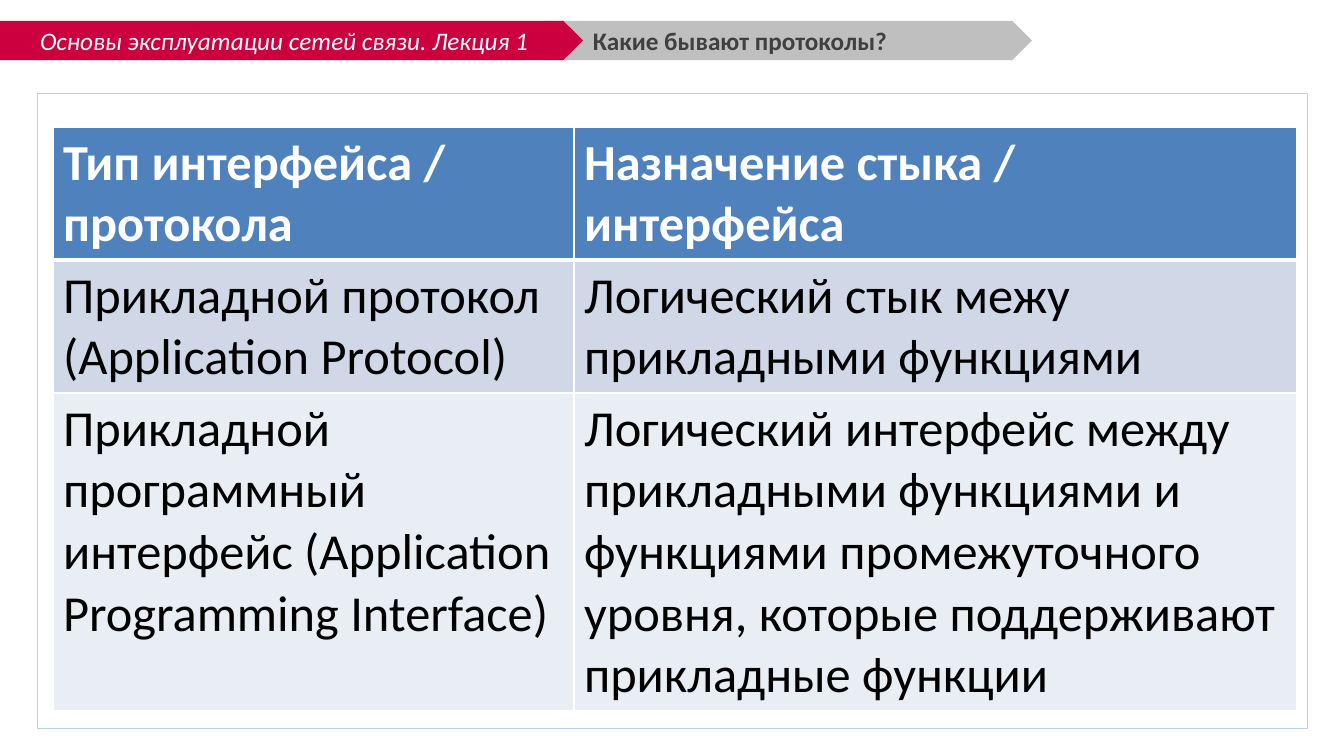
import pptx
import pptx.util
import pptx.dml.color
import pptx.enum.shapes
import pptx.enum.text
import pptx.oxml.ns
import lxml.etree

RGBColor = pptx.dml.color.RGBColor
WHITE = RGBColor(0xFF, 0xFF, 0xFF)
BLACK = RGBColor(0x00, 0x00, 0x00)
CRIMSON = RGBColor(0xCC, 0x00, 0x3F)
GREY = RGBColor(0xBF, 0xBF, 0xBF)
DARK_GREY = RGBColor(0x40, 0x40, 0x40)
PALE_BLUE = RGBColor(0xB8, 0xD0, 0xED)
HEADER_BLUE = RGBColor(0x4F, 0x81, 0xBD)
BAND_DARK = RGBColor(0xD0, 0xD8, 0xE8)
BAND_LIGHT = RGBColor(0xE9, 0xED, 0xF4)

SLIDE_WIDTH, SLIDE_HEIGHT = 1344, 756
EMU_PER_PX = 914400 / 100.8
PENTAGON = pptx.enum.shapes.MSO_SHAPE.PENTAGON
RECTANGLE = pptx.enum.shapes.MSO_SHAPE.RECTANGLE
CENTER = pptx.enum.text.PP_ALIGN.CENTER
LEFT = pptx.enum.text.PP_ALIGN.LEFT
MIDDLE = pptx.enum.text.MSO_ANCHOR.MIDDLE

HEADER = ("Тип интерфейса / протокола", "Назначение стыка / интерфейса")
PROTOCOL = ("Прикладной протокол (Application Protocol)",
            "Логический стык межу прикладными функциями")
PROGRAM_INTERFACE = (
    "Прикладной программный интерфейс (Application Programming Interface)",
    "Логический интерфейс между прикладными функциями и функциями "
    "промежуточного уровня, которые поддерживают прикладные функции")


def px(length):
    return pptx.util.Emu(round(length * EMU_PER_PX))


def write_text(frame, text, *, size, color, font="Calibri", bold=False,
               italic=False, align=LEFT):
    frame.word_wrap = True
    para = frame.paragraphs[0]
    para.alignment = align
    span = para.add_run()
    span.text = text
    span.font.name = font
    span.font.size = pptx.util.Pt(size)
    span.font.bold = bold
    span.font.italic = italic
    span.font.color.rgb = color


class SlideBuilder:
    """Holds the text sizes and the slide being built."""
    bar_size = 18
    table_size = 36

    def __init__(self, page):
        self.page = page

    def shape(self, kind, left, top, width, height, fill=None, line=None):
        box = self.page.shapes.add_shape(
            kind, px(left), px(top), px(width), px(height))
        box.shadow.inherit = False
        if fill is None:
            box.fill.background()
        else:
            box.fill.solid()
            box.fill.fore_color.rgb = fill
        if line is None:
            box.line.fill.background()
        else:
            box.line.color.rgb = line
            box.line.width = pptx.util.Pt(0.25)
        return box

    def bar_text(self, box, text, **style):
        box.text_frame.vertical_anchor = MIDDLE
        write_text(box.text_frame, text, size=self.bar_size, **style)

    def label(self, left, top, width, height, text, **style):
        box = self.page.shapes.add_textbox(
            px(left), px(top), px(width), px(height))
        self.bar_text(box, text, **style)

    def border(self, cell, side, points):
        props = cell._tc.get_or_add_tcPr()
        line = lxml.etree.SubElement(
            props, pptx.oxml.ns.qn("a:ln" + side), w=str(pptx.util.Pt(points)))
        fill = lxml.etree.SubElement(line, pptx.oxml.ns.qn("a:solidFill"))
        lxml.etree.SubElement(
            fill, pptx.oxml.ns.qn("a:srgbClr"), val=str(WHITE))

    def table(self, left, top, widths, heights, rows, fills):
        grid = self.page.shapes.add_table(
            len(rows), len(widths), px(left), px(top),
            px(sum(widths)), px(sum(heights))).table
        grid.horz_banding = False
        for column, width in zip(grid.columns, widths):
            column.width = px(width)
        for index, (row, height) in enumerate(zip(grid.rows, heights)):
            row.height = px(height)
            header = index == 0
            # The rule under the header is thicker than the others
            edges = {"L": 1, "R": 1, "T": 3 if index == 1 else 1,
                     "B": 3 if header else 1}
            for cell, text in zip(row.cells, rows[index]):
                for side, points in edges.items():
                    self.border(cell, side, points)
                cell.fill.solid()
                cell.fill.fore_color.rgb = fills[index]
                write_text(cell.text_frame, text, size=self.table_size,
                           color=WHITE if header else BLACK, bold=header)


def main():
    deck = pptx.Presentation()
    deck.slide_width, deck.slide_height = px(SLIDE_WIDTH), px(SLIDE_HEIGHT)
    builder = SlideBuilder(deck.slides.add_slide(deck.slide_layouts[6]))

    # Topic bar and content frame
    builder.shape(PENTAGON, 545, 21, 487, 39, fill=GREY)
    builder.shape(RECTANGLE, 37, 93, 1270, 635, line=PALE_BLUE)

    # Lecture bar and topic
    lecture = builder.shape(PENTAGON, -5, 21, 588, 39, fill=CRIMSON)
    builder.bar_text(lecture, "Основы эксплуатации сетей связи. Лекция 1",
                     color=WHITE, italic=True, align=CENTER)
    builder.label(583, 21, 417, 39, "Какие бывают протоколы?",
                  color=DARK_GREY, bold=True)

    # Table of interfaces
    builder.table(53, 127, (521, 723), (133, 133, 318),
                  (HEADER, PROTOCOL, PROGRAM_INTERFACE),
                  (HEADER_BLUE, BAND_DARK, BAND_LIGHT))

    deck.save("out.pptx")


if __name__ == "__main__":
    main()
